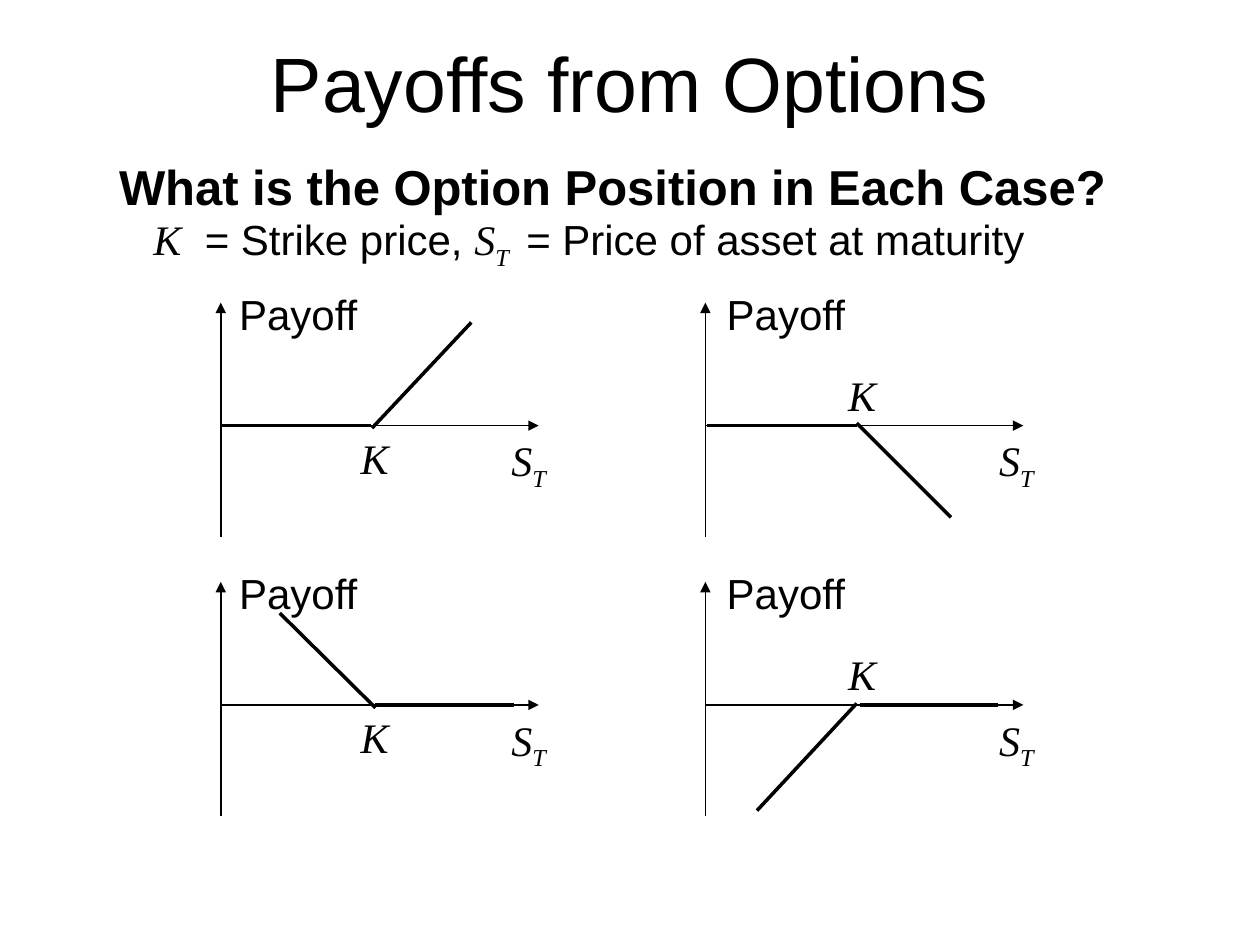
"""Build the slide on option payoffs with four payoff diagrams."""
import dataclasses

import pptx
import pptx.dml.color
import pptx.enum.shapes
import pptx.enum.text
import pptx.oxml
import pptx.oxml.ns
import pptx.util
from pptx.util import Cm, Pt


@dataclasses.dataclass(frozen=True)
class Theme:
    """Colours, fonts and sizes of the slide."""
    ink: pptx.dml.color.RGBColor = pptx.dml.color.RGBColor(0, 0, 0)
    sans: str = "Arial"
    serif: str = "Times New Roman"
    title: int = 44
    question: int = 28
    label: int = 24
    axis: float = 1
    payoff: float = 2


@dataclasses.dataclass(frozen=True)
class Position:
    """Payoff of an option position: segments in cm from the origin of its axes."""
    column: int
    row: int
    flat: tuple
    slope: tuple


THEME = Theme()
COLUMNS = (4.45, 14.22)
TOP, ROW_STEP = 6.1, 5.63
AXIS_HEIGHT, AXIS_WIDTH, ORIGIN_DROP = 4.72, 6.41, 2.48
STRIKE_TOPS = (2.49, 1.22)
LABEL_SHIFT = 0.06
POSITIONS = (
    Position(0, 0, (0.03, 0, 3.02, 0), (3.05, 0.05, 5.05, -2.08)),
    Position(1, 0, (0.03, 0, 3.05, 0), (3.05, -0.05, 4.95, 1.85)),
    Position(0, 1, (3.1, 0, 5.92, 0), (3.12, 0.06, 1.19, -1.85)),
    Position(1, 1, (3.12, 0, 5.89, 0), (1.04, 2.13, 3.05, -0.03)),
)


def style(font, size, family=THEME.sans, italic=False):
    """Apply size, family, slant and ink to a font."""
    font.size = Pt(size)
    font.name = family
    font.italic = italic
    font.color.rgb = THEME.ink


def add_run(paragraph, text, subscript=False):
    """Append a run, lowered when it is a subscript."""
    run = paragraph.add_run()
    run.text = text
    if subscript:
        run._r.get_or_add_rPr().set("baseline", "-25000")
    return run


def place(placeholder, left, top, width, height):
    """Move and size a placeholder, given in cm."""
    placeholder.left, placeholder.top = Cm(left), Cm(top)
    placeholder.width, placeholder.height = Cm(width), Cm(height)
    placeholder.text_frame.auto_size = pptx.enum.text.MSO_AUTO_SIZE.NONE


def fill_title(title):
    """Write the heading and the question below it."""
    place(title, 1.9, 1, 21.6, 3.17)
    title.text_frame.vertical_anchor = pptx.enum.text.MSO_ANCHOR.MIDDLE
    heading = title.text_frame.paragraphs[0]
    heading.alignment = pptx.enum.text.PP_ALIGN.CENTER
    style(add_run(heading, "Payoffs from Options").font, THEME.title)
    heading.add_line_break()
    question = add_run(heading, "What is the Option Position in Each Case? ")
    style(question.font, THEME.question)
    question.font.bold = True
    style(add_run(heading, " ").font, THEME.title)


def fill_legend(body):
    """Explain the symbols in the body placeholder."""
    place(body, 1.9, 3.81, 21.6, 11.43)
    body.text_frame.margin_top = Cm(0.5)
    legend = body.text_frame.paragraphs[0]
    legend.space_before = Pt(0)
    properties = legend._p.get_or_add_pPr()
    properties.set("marL", str(Cm(0.94)))
    properties.set("indent", "0")
    pptx.oxml.ns.qn("a:buNone")
    properties.append(pptx.oxml.parse_xml(f"<a:buNone {pptx.oxml.ns.nsdecls('a')}/>"))
    for text, is_symbol, subscript in (
        ("K", True, False),
        ("  = Strike price, ", False, False),
        ("S", True, False),
        ("T ", True, True),
        (" = Price of asset at maturity", False, False),
    ):
        family = THEME.serif if is_symbol else THEME.sans
        style(add_run(legend, text, subscript).font, THEME.label, family, is_symbol)


def add_line(slide, start, end, weight, arrow=False):
    """Draw a straight line between two points in cm, with an arrow at its end if asked."""
    line = slide.shapes.add_connector(
        pptx.enum.shapes.MSO_CONNECTOR.STRAIGHT, *map(Cm, (*start, *end)))
    line.line.color.rgb = THEME.ink
    line.line.width = Pt(weight)
    properties = line._element.spPr
    namespace = pptx.oxml.ns.nsdecls("a")
    if arrow:
        properties.find(pptx.oxml.ns.qn("a:ln")).append(
            pptx.oxml.parse_xml(f'<a:tailEnd {namespace} type="triangle"/>'))
    properties.append(pptx.oxml.parse_xml(f"<a:effectLst {namespace}/>"))


def add_label(slide, left, top, width, text, subscript="", family=THEME.serif):
    """Add an unwrapped label, italic when set in the symbol font."""
    frame = slide.shapes.add_textbox(Cm(left), Cm(top), Cm(width), Cm(1.27)).text_frame
    frame.word_wrap = False
    frame.auto_size = pptx.enum.text.MSO_AUTO_SIZE.SHAPE_TO_FIT_TEXT
    label = frame.paragraphs[0]
    style(label.font, THEME.label, family, family == THEME.serif)
    add_run(label, text)
    if subscript:
        add_run(label, subscript, subscript=True)


def add_diagram(slide, position):
    """Draw the axes, labels and payoff of one position."""
    left = COLUMNS[position.column]
    top = TOP + position.row * ROW_STEP
    origin = top + ORIGIN_DROP
    add_line(slide, (left, top + AXIS_HEIGHT), (left, top), THEME.axis, arrow=True)
    add_line(slide, (left, origin), (left + AXIS_WIDTH, origin), THEME.axis, arrow=True)

    label_left = left + position.column * LABEL_SHIFT
    add_label(slide, label_left + 0.12, top - 0.41, 2.9, "Payoff", family=THEME.sans)
    add_label(slide, label_left + 5.61, top + 2.54, 1.24, "S", "T")
    add_label(slide, label_left + 2.57, top + STRIKE_TOPS[position.column], 1.07, "K")

    for x1, y1, x2, y2 in (position.flat, position.slope):
        add_line(slide, (left + x1, origin + y1), (left + x2, origin + y2), THEME.payoff)


def main():
    """Build and save the slide."""
    deck = pptx.Presentation()
    deck.slide_width, deck.slide_height = Cm(25.4), Cm(19.05)
    slide = deck.slides.add_slide(deck.slide_layouts[1])
    fill_title(slide.shapes.title)
    fill_legend(slide.placeholders[1])
    for position in POSITIONS:
        add_diagram(slide, position)
    deck.save("out.pptx")


if __name__ == "__main__":
    main()
